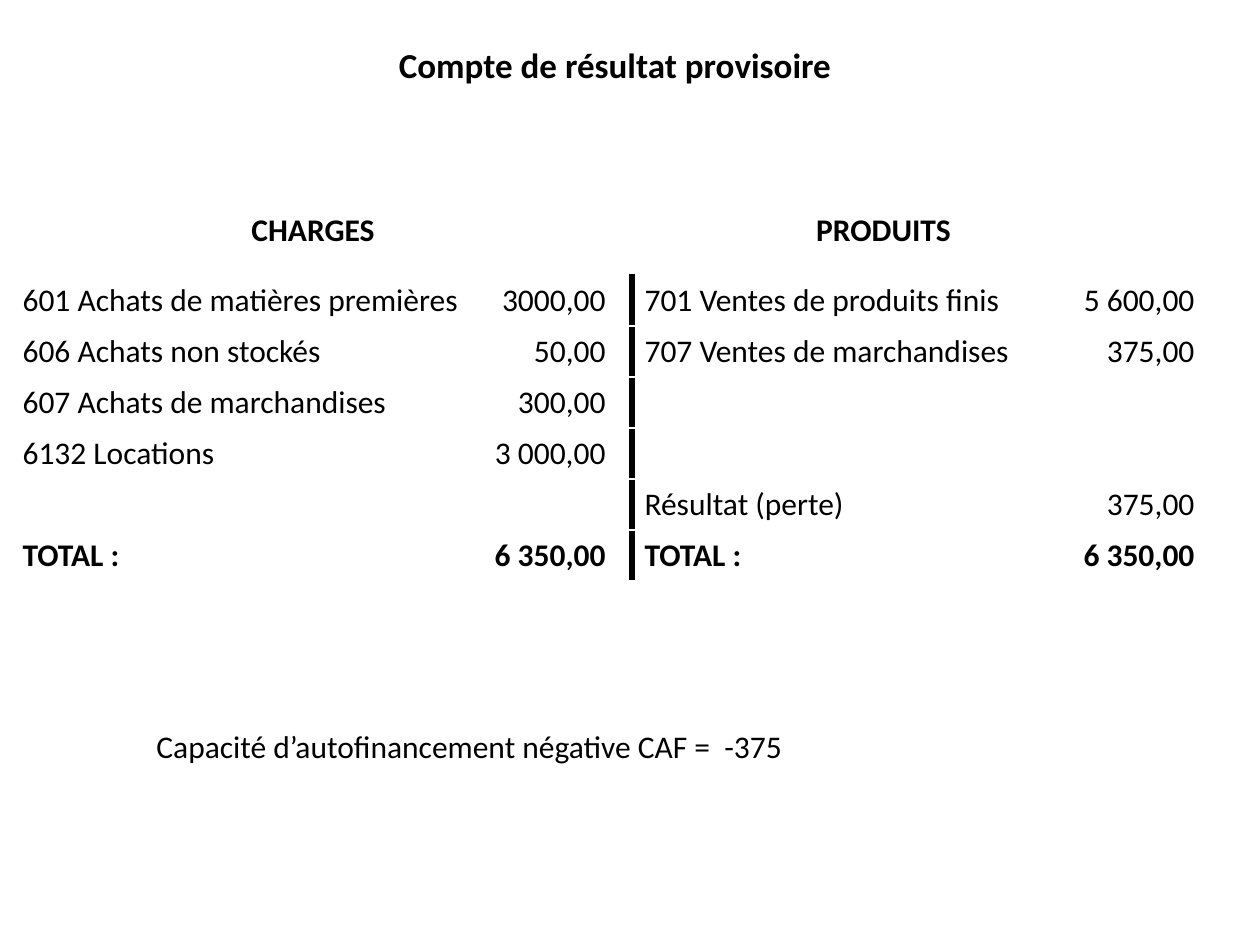
"""Build a provisional income statement slide with charges facing income."""
from dataclasses import dataclass
from typing import Any

from lxml import etree
from pptx import Presentation
from pptx import util as u
from pptx.dml.color import RGBColor
from pptx.enum import text
from pptx.oxml.ns import qn

BLACK = RGBColor(0, 0, 0)
FONT = "Calibri"
PX_PER_INCH = 126
ROW_HEIGHT = 51
COLUMN_WIDTH = 622
TABLE_LEFT, TABLE_TOP = 10, 275
DIVIDER_POINTS = 4.5


@dataclass(frozen=True)
class Entry:
    label: str
    amount: str
    bold: bool = False


@dataclass(frozen=True)
class Side:
    heading: str
    heading_left: int
    heading_width: int
    amount_tab: int
    divider_edge: str
    entries: tuple[Entry | None, ...]


@dataclass(frozen=True)
class Area:
    left: int
    top: int
    width: int
    height: int


TOTAL = Entry("TOTAL :", "6 350,00", bold=True)
SIDES = (
    Side("CHARGES", 184, 258, 583, "a:lnR", (
        Entry("601 Achats de matières premières", "3000,00"),
        Entry("606 Achats non stockés", "50,00"),
        Entry("607 Achats de marchandises", "300,00"),
        Entry("6132 Locations", "3 000,00"),
        None,
        TOTAL,
    )),
    Side("PRODUITS", 730, 307, 550, "a:lnL", (
        Entry("701 Ventes de produits finis", "5 600,00"),
        Entry("707 Ventes de marchandises", "375,00"),
        None,
        None,
        Entry("Résultat (perte)", "375,00"),
        TOTAL,
    )),
)


def px(length: int) -> u.Emu:
    return u.Emu(round(length * u.Inches(1) / PX_PER_INCH))


def write(frame: Any, words: str, *, size: int = 18, bold: bool = False,
          align: text.PP_ALIGN = text.PP_ALIGN.LEFT) -> Any:
    para = frame.paragraphs[0]
    para.alignment = align
    span = para.add_run()
    span.text = words
    span.font.name = FONT
    span.font.size = u.Pt(size)
    span.font.bold = bold
    span.font.color.rgb = BLACK
    return para


def place(box: Any, area: Area, words: str, **style: Any) -> None:
    box.left, box.top = px(area.left), px(area.top)
    box.width, box.height = px(area.width), px(area.height)
    frame = box.text_frame
    frame.word_wrap = True
    frame.auto_size = text.MSO_AUTO_SIZE.SHAPE_TO_FIT_TEXT
    frame.vertical_anchor = text.MSO_ANCHOR.TOP
    write(frame, words, **style)


def add_text(page: Any, area: Area, words: str, **style: Any) -> None:
    place(page.shapes.add_textbox(0, 0, 0, 0), area, words, **style)


def add_right_tab(para: Any, position: int) -> None:
    tabs = etree.SubElement(para._p.get_or_add_pPr(), qn("a:tabLst"))
    etree.SubElement(tabs, qn("a:tab"), pos=str(px(position)), algn="r")


def draw_divider(cell: Any, edge: str) -> None:
    line = etree.Element(qn(edge), w=str(u.Pt(DIVIDER_POINTS)))
    fill = etree.SubElement(line, qn("a:solidFill"))
    etree.SubElement(fill, qn("a:srgbClr"), val=str(BLACK))
    cell._tc.get_or_add_tcPr().insert(0, line)


def fill_cell(cell: Any, entry: Entry | None, side: Side) -> None:
    cell.fill.background()
    draw_divider(cell, side.divider_edge)
    if entry:
        para = write(cell.text_frame, f"{entry.label}\t{entry.amount}", bold=entry.bold)
        add_right_tab(para, side.amount_tab)


def add_accounts(page: Any, sides: tuple[Side, ...]) -> None:
    rows = len(sides[0].entries)
    table = page.shapes.add_table(
        rows, len(sides), px(TABLE_LEFT), px(TABLE_TOP),
        px(COLUMN_WIDTH * len(sides)), px(ROW_HEIGHT * rows)).table
    table.first_row = table.horz_banding = False
    for row in table.rows:
        row.height = px(ROW_HEIGHT)
    for column, side in enumerate(sides):
        table.columns[column].width = px(COLUMN_WIDTH)
        for row, entry in enumerate(side.entries):
            fill_cell(table.cell(row, column), entry, side)


def main() -> None:
    deck = Presentation()
    deck.slide_width, deck.slide_height = px(1260), px(945)
    page = deck.slides.add_slide(deck.slide_layouts.get_by_name("Title Only"))
    center = text.PP_ALIGN.CENTER
    place(page.shapes.title, Area(94, 37, 1042, 55), "Compte de résultat provisoire",
          size=20, bold=True, align=center)
    add_accounts(page, SIDES)
    for side in SIDES:
        add_text(page, Area(side.heading_left, 204, side.heading_width, 51),
                 side.heading, bold=True, align=center)
    add_text(page, Area(144, 721, 764, 51),
             "Capacité d’autofinancement négative CAF =  -375")
    deck.save("out.pptx")


if __name__ == "__main__":
    main()
